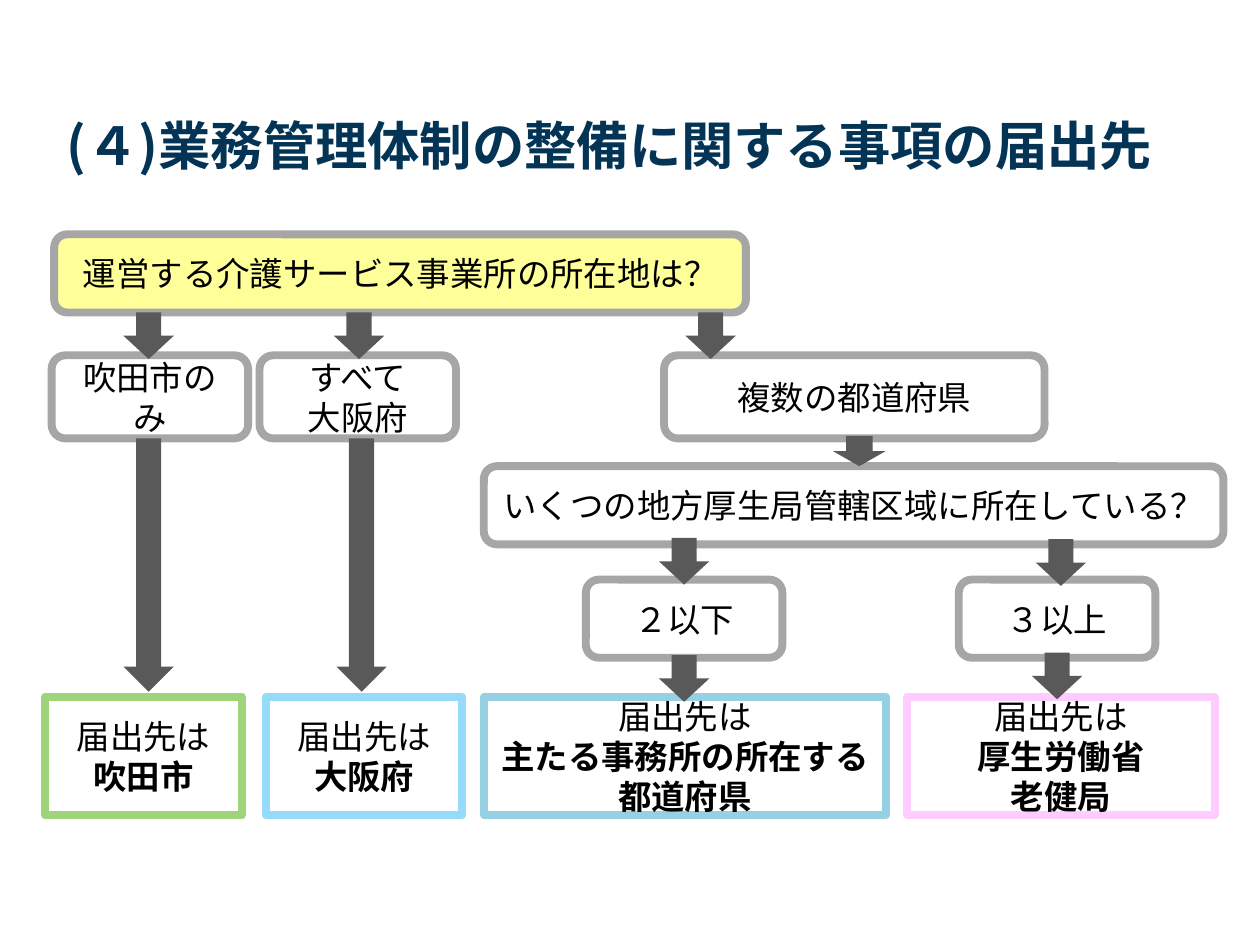
from dataclasses import dataclass

from pptx import Presentation
from pptx.dml.color import RGBColor
from pptx.enum.shapes import MSO_SHAPE as Shape
from pptx.enum.text import MSO_ANCHOR as Anchor, MSO_AUTO_SIZE as AutoSize, PP_ALIGN as Align
from pptx.util import Inches, Pt

COLUMNS, ROWS = 100, 75
FONT = "Noto Sans CJK JP"
NAVY = RGBColor(0x03, 0x33, 0x55)
BLACK = RGBColor(0, 0, 0)
WHITE = RGBColor(0xFF, 0xFF, 0xFF)
YELLOW = RGBColor(0xFF, 0xFF, 0x99)
GREY = RGBColor(0xA6, 0xA6, 0xA6)
DARK_GREY = RGBColor(0x59, 0x59, 0x59)
GREEN = RGBColor(0x9F, 0xD4, 0x7D)
SKY = RGBColor(0x97, 0xDB, 0xFB)
TEAL = RGBColor(0x95, 0xD1, 0xE2)
PINK = RGBColor(0xFF, 0xCC, 0xFF)

CHOICE_WIDTH = 15.6
QUESTION_HEIGHT = 6.2
ARROW_WIDTH, ARROW_HEIGHT = 4, 3.7

presentation = Presentation()
presentation.slide_width, presentation.slide_height = Inches(10), Inches(7.5)
COLUMN = presentation.slide_width / COLUMNS
ROW = presentation.slide_height / ROWS


@dataclass
class Box:
    left: float
    top: float
    width: float
    height: float

    def inner(self, left, top, width, height):
        return Box(self.left + left, self.top + top, width, height)

    def emu(self):
        return (int(self.left * COLUMN), int(self.top * ROW),
                int(self.width * COLUMN), int(self.height * ROW))


def add_words(paragraph, words, size, color, bold):
    for number, line in enumerate(words.split("\n")):
        if number:
            paragraph.add_line_break()
        run = paragraph.add_run()
        run.text = line
        run.font.name, run.font.size, run.font.bold = FONT, Pt(size), bold
        run.font.color.rgb = color


def add_plain(slide, kind, box, fill):
    shape = slide.shapes.add_shape(kind, *box.emu())
    shape.shadow.inherit = False
    shape.fill.solid()
    shape.fill.fore_color.rgb = fill
    shape.line.fill.background()
    return shape


def add_card(slide, box, paragraphs, kind=Shape.ROUNDED_RECTANGLE, border=GREY, fill=WHITE):
    card = add_plain(slide, kind, box, fill)
    card.line.color.rgb = border
    card.line.width = Pt(4.5)
    frame = card.text_frame
    frame.word_wrap = True
    frame.vertical_anchor = Anchor.MIDDLE
    for number, (words, bold) in enumerate(paragraphs):
        paragraph = frame.add_paragraph() if number else frame.paragraphs[0]
        paragraph.alignment = Align.CENTER
        add_words(paragraph, words, 19.1, BLACK, bold)


def add_arrow(slide, box, left, top, width=ARROW_WIDTH, height=ARROW_HEIGHT):
    add_plain(slide, Shape.DOWN_ARROW, box.inner(left, top, width, height), DARK_GREY)


def add_heading(slide, box):
    title = slide.shapes.title
    title.left, title.top, title.width, title.height = box.emu()
    frame = title.text_frame
    frame.word_wrap = True
    frame.auto_size = AutoSize.NONE
    frame.vertical_anchor = Anchor.MIDDLE
    paragraph = frame.paragraphs[0]
    paragraph.alignment = Align.LEFT
    paragraph.line_spacing = 0.9
    hanging = paragraph._p.get_or_add_pPr()
    hanging.set("marL", str(Inches(0.26)))
    hanging.set("indent", str(-Inches(0.26)))
    add_words(paragraph, "(４)業務管理体制の整備に関する事項の届出先", 29.9, NAVY, True)


def add_destinations(slide, box):
    destinations = [
        (0, 15.6, "吹田市", GREEN),
        (17.5, 15.6, "大阪府", SKY),
        (34.8, 31.9, "主たる事務所の所在する\n都道府県", TEAL),
        (68.4, 24.4, "厚生労働省\n老健局", PINK),
    ]
    for left, width, office, border in destinations:
        add_card(slide, box.inner(left, 0, width, box.height),
                 [("届出先は", False), (office, True)], Shape.RECTANGLE, border)


def add_bureau_branch(slide, box):
    add_card(slide, box.inner(0, 0, box.width, QUESTION_HEIGHT),
             [("いくつの地方厚生局管轄区域に所在している？", False)])
    for left, count in ((8.1, "２以下"), (37.7, "３以上")):
        add_card(slide, box.inner(left, 9, CHOICE_WIDTH, QUESTION_HEIGHT), [(count, False)])
    for left, top in ((13.9, 5.7), (43.8, 5.8), (13.9, 15), (43.5, 14.8)):
        add_arrow(slide, box, left, top)


def add_location_branch(slide, box):
    add_card(slide, box.inner(0.2, 0, 54.9, QUESTION_HEIGHT),
             [("運営する介護サービス事業所の所在地は？", False)], fill=YELLOW)
    choices = [
        (0, CHOICE_WIDTH, ["吹田市のみ"]),
        (16.5, CHOICE_WIDTH, ["すべて", "大阪府"]),
        (48.6, 30.2, ["複数の都道府県"]),
    ]
    for left, width, lines in choices:
        add_card(slide, box.inner(left, 9.6, width, 6.6), [(line, False) for line in lines])
    for left in (5.7, 22.4, 50.3):
        add_arrow(slide, box, left, QUESTION_HEIGHT)
    for left in (5.7, 22.6):
        add_arrow(slide, box, left, 16.2, height=20.1)
    add_arrow(slide, box, 62, 16, width=4.2, height=2.4)


def main():
    slide = presentation.slides.add_slide(presentation.slide_layouts[5])
    add_heading(slide, Box(4.3, 8, 91.1, 7.6))
    add_destinations(slide, Box(3.6, 55.3, 92.8, 9.4))
    add_bureau_branch(slide, Box(38.4, 37, 58.7, 15.2))
    add_location_branch(slide, Box(4.1, 18.6, 78.8, 16.2))
    presentation.save("out.pptx")


if __name__ == "__main__":
    main()
